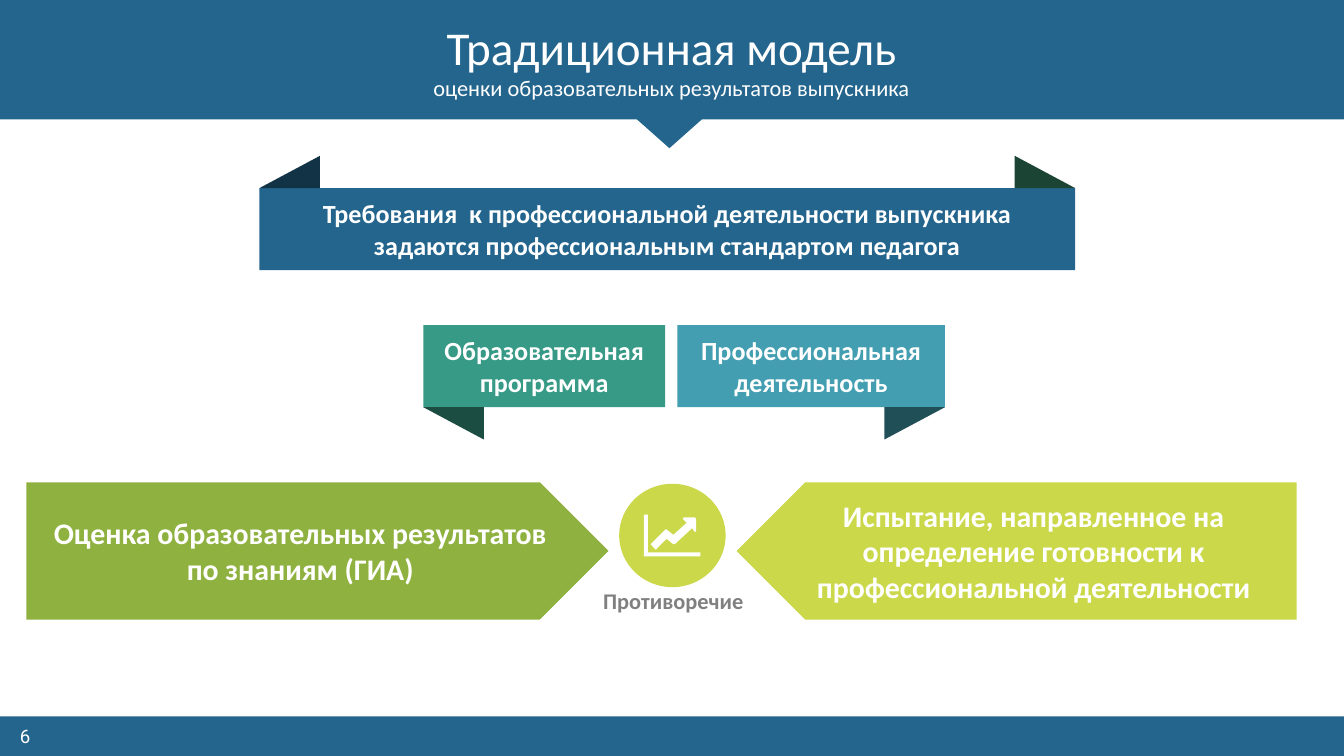
from pptx import Presentation
from pptx.dml.color import RGBColor
from pptx.enum import shapes, text
from pptx.util import Pt

COLORS = {
    "blue": "24658D", "navy": "123246", "forest": "1C4434",
    "teal": "379A86", "dark_teal": "1C4D43",
    "cyan": "429EB0", "dark_cyan": "214F58",
    "green": "8FB140", "lime": "CAD849",
    "white": "FFFFFF", "gray": "808080",
}
FOLD_W, FOLD_H = 32.4, 17.3
KIND = shapes.MSO_SHAPE

# Chart icon outlines, in hundredths of an inch
AXES = [(479, 414), (479, 383), (482, 383), (482, 411), (521, 411), (521, 414)]
TREND = [(518, 395), (517, 395.5), (515, 393), (502, 405), (501, 405),
         (496, 401), (488, 409), (484, 405), (495, 394), (496, 394),
         (501, 398), (511, 389), (508, 386), (509, 385), (517, 385), (518, 386)]


def paint(shape, color):
    shape.fill.solid()
    shape.fill.fore_color.rgb = RGBColor.from_string(COLORS[color])
    shape.line.fill.background()
    shape.shadow.inherit = False


def write(shape, words, size, color="white", bold=False, font="Calibri"):
    frame = shape.text_frame
    frame.word_wrap = True
    frame.vertical_anchor = text.MSO_ANCHOR.MIDDLE
    paragraph = frame.paragraphs[0]
    paragraph.text = words
    paragraph.alignment = text.PP_ALIGN.CENTER
    paragraph.font.name = font
    paragraph.font.size = Pt(size)
    paragraph.font.bold = bold
    paragraph.font.color.rgb = RGBColor.from_string(COLORS[color])
    return frame


def add_block(slide, kind, box, color, words=None, size=14, flips=()):
    block = slide.shapes.add_shape(kind, *map(Pt, box))
    paint(block, color)
    for flip in flips:
        block._element.spPr.get_or_add_xfrm().set(flip, "1")
    if words:
        write(block, words, size, bold=True)
    return block


def add_label(slide, box, words, size, **style):
    """Add text without insets."""
    label = slide.shapes.add_textbox(*map(Pt, box))
    frame = write(label, words, size, **style)
    frame.margin_left = frame.margin_right = 0
    frame.margin_top = frame.margin_bottom = 0
    return frame


def add_fold(slide, banner, color, right=False, below=False):
    """Add a folded ribbon end at one corner of a banner."""
    left, top, width, height = banner
    x = left + width - FOLD_W if right else left
    y = top + height if below else top - FOLD_H
    flips = ([] if right else ["flipH"]) + (["flipV"] if below else [])
    add_block(slide, KIND.RIGHT_TRIANGLE, (x, y, FOLD_W, FOLD_H), color, flips=flips)


def add_chart_icon(slide):
    builder = slide.shapes.build_freeform(*AXES[0], scale=Pt(0.72))
    builder.add_line_segments(AXES[1:])
    builder.move_to(*TREND[0])
    builder.add_line_segments(TREND[1:])
    paint(builder.convert_to_shape(), "white")


def main():
    deck = Presentation()
    deck.slide_width, deck.slide_height = Pt(720), Pt(405)
    slide = deck.slides.add_slide(deck.slide_layouts[6])

    # Footer and header
    add_block(slide, KIND.RECTANGLE, (0, 383.8, 720, 21.2), "blue")
    add_label(slide, (1.4, 388, 24, 12.2), "6", 10, font="Roboto")
    add_block(slide, KIND.RECTANGLE, (0, 0, 720, 64), "blue")
    pointer = add_block(slide, KIND.ISOSCELES_TRIANGLE, (340.6, 63.4, 36, 16), "blue")
    pointer.rotation = 180
    title = add_label(slide, (31, 10, 657.5, 27), "Традиционная модель", 25.2)
    title.vertical_anchor = text.MSO_ANCHOR.TOP
    add_label(slide, (31, 40.3, 657.5, 13.7),
              "оценки образовательных результатов выпускника", 12)

    # Requirements banner
    requirements = (139, 100.8, 437, 44)
    add_block(slide, KIND.RECTANGLE, requirements, "blue",
              "Требования  к профессиональной деятельности выпускника "
              "задаются профессиональным стандартом педагога")
    add_fold(slide, requirements, "navy")
    add_fold(slide, requirements, "forest", right=True)

    # Program and activity banners
    for left, width, color, shade, right, words in (
            (226.8, 129.6, "teal", "dark_teal", False, "Образовательная программа"),
            (362.9, 143.3, "cyan", "dark_cyan", True, "Профессиональная деятельность")):
        banner = (left, 174.2, width, 44)
        add_block(slide, KIND.RECTANGLE, banner, color, words)
        add_fold(slide, banner, shade, right, below=True)

    # Opposing arrows
    for left, width, color, flips, words in (
            (14.2, 311.8, "green", (),
             "Оценка образовательных результатов по знаниям (ГИА)"),
            (394.6, 300, "lime", ("flipH",),
             "Испытание, направленное на определение готовности к "
             "профессиональной деятельности")):
        add_block(slide, KIND.PENTAGON, (left, 258.4, width, 73.6), color,
                  words, 16, flips)

    # Contradiction between them
    contradiction = slide.shapes.add_textbox(Pt(298.8), Pt(311), Pt(123.8), Pt(21.8))
    write(contradiction, "Противоречие", 12, "gray", bold=True)
    add_block(slide, KIND.OVAL, (331.7, 259.2, 57, 55.4), "lime")
    add_chart_icon(slide)

    deck.save("out.pptx")


if __name__ == "__main__":
    main()
